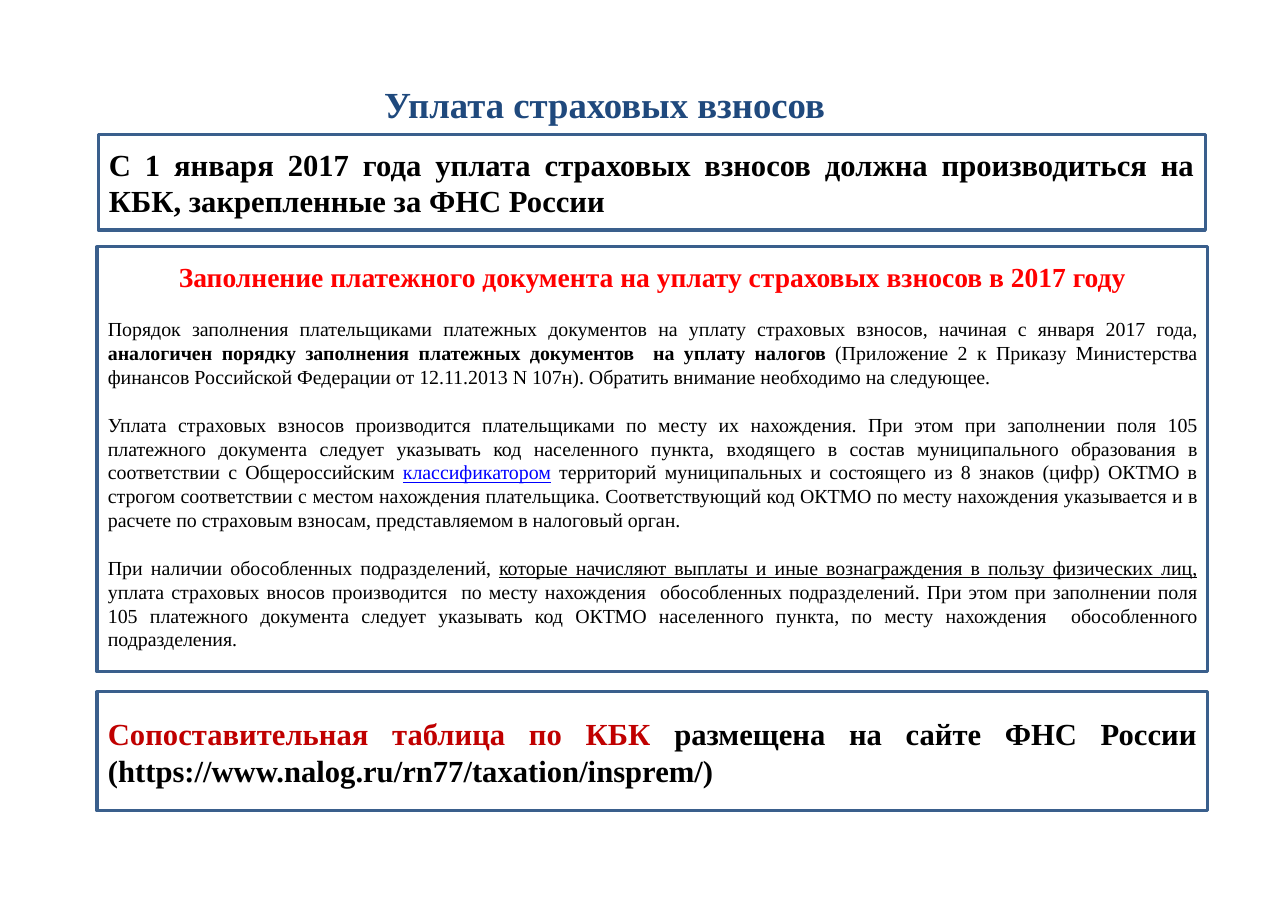
from dataclasses import dataclass

from pptx import Presentation
from pptx.dml.color import RGBColor as Color
from pptx.enum.shapes import MSO_SHAPE as Shape
from pptx.enum.text import MSO_ANCHOR as Anchor, MSO_AUTO_SIZE as AutoSize, PP_ALIGN as Align
from pptx.util import Pt


@dataclass(frozen=True)
class Theme:
    font: str = "Times New Roman"
    title: str = "1F497D"
    border: str = "3A5F8C"
    ink: str = "000000"
    heading: str = "FF0000"
    accent: str = "C00000"
    link: str = "0000FF"
    title_size: float = 24
    lead_size: float = 20
    heading_size: float = 18
    body_size: float = 13
    leading: float = 1.2
    border_width: float = 2


THEME = Theme()

LEAD = [("С 1 января 2017 года уплата страховых взносов должна производиться "
         "на КБК, закрепленные за ФНС России", {})]
HEADING = [("Заполнение платежного документа на уплату страховых взносов в 2017 году",
            {"color": THEME.heading})]
BODY = [
    [("Порядок заполнения плательщиками платежных документов на уплату страховых "
      "взносов, начиная с января 2017 года, ", {}),
     ("аналогичен порядку заполнения платежных документов  на уплату налогов ",
      {"bold": True}),
     ("(Приложение 2 к Приказу Министерства финансов Российской Федерации от "
      "12.11.2013 N 107н). Обратить внимание необходимо на следующее.", {})],
    [("Уплата страховых взносов производится плательщиками по месту их нахождения. "
      "При этом при заполнении поля 105 платежного документа следует указывать код "
      "населенного пункта, входящего в состав муниципального образования в "
      "соответствии с Общероссийским ", {}),
     ("классификатором", {"color": THEME.link, "underline": True}),
     (" территорий муниципальных и состоящего из 8 знаков (цифр) ОКТМО в строгом "
      "соответствии с местом нахождения плательщика. Соответствующий код ОКТМО по "
      "месту нахождения указывается и в расчете по страховым взносам, "
      "представляемом в налоговый орган.", {})],
    [("При наличии обособленных подразделений, ", {}),
     ("которые начисляют выплаты и иные вознаграждения в пользу физических лиц, ",
      {"underline": True}),
     ("уплата страховых вносов производится  по месту нахождения  обособленных "
      "подразделений. При этом при заполнении поля 105 платежного документа следует "
      "указывать код ОКТМО населенного пункта, по месту нахождения  обособленного "
      "подразделения.", {})],
]
SITE = [("Сопоставительная таблица по КБК ", {"color": THEME.accent}),
        ("размещена на сайте ФНС России (https://www.nalog.ru/rn77/taxation/insprem/)", {})]


def apply(target, values):
    for name, value in values.items():
        setattr(target, name, value)


def write_para(para, spans, size, align=Align.JUSTIFY, before=0, bold=False):
    apply(para, {"alignment": align, "space_before": Pt(before), "space_after": Pt(0),
                 "line_spacing": Pt(round(size * THEME.leading, 1))})
    for text, changes in spans:
        span = para.add_run()
        span.text = text
        look = {"bold": bold, "color": THEME.ink, **changes}
        span.font.color.rgb = Color.from_string(look.pop("color"))
        apply(span.font, {"name": THEME.font, "size": Pt(size), **look})


def add_title(page, left, top, width, height):
    title = page.shapes.title
    apply(title, {"left": Pt(left), "top": Pt(top), "width": Pt(width), "height": Pt(height)})
    frame = title.text_frame
    apply(frame, {"auto_size": AutoSize.NONE, "word_wrap": True,
                  "vertical_anchor": Anchor.MIDDLE})
    write_para(frame.paragraphs[0], [("Уплата страховых взносов ", {"color": THEME.title})],
               THEME.title_size, Align.CENTER, bold=True)


def add_panel(page, left, top, width, height, anchor=Anchor.MIDDLE):
    box = page.shapes.add_shape(Shape.RECTANGLE, Pt(left), Pt(top), Pt(width), Pt(height))
    box.shadow.inherit = False
    box.fill.background()
    box.line.color.rgb = Color.from_string(THEME.border)
    box.line.width = Pt(THEME.border_width)
    apply(box.text_frame, {"word_wrap": True, "vertical_anchor": anchor})
    return box.text_frame


def add_statement(page, spans, left, top, width, height):
    frame = add_panel(page, left, top, width, height)
    write_para(frame.paragraphs[0], spans, THEME.lead_size, bold=True)


def add_instructions(page, left, top, width, height):
    frame = add_panel(page, left, top, width, height, Anchor.TOP)
    frame.margin_top = Pt(8.7)
    write_para(frame.paragraphs[0], HEADING, THEME.heading_size, Align.CENTER, bold=True)
    for spans in BODY:
        write_para(frame.add_paragraph(), spans, THEME.body_size,
                   before=THEME.body_size * THEME.leading)


def main():
    deck = Presentation()
    apply(deck, {"slide_width": Pt(841.68), "slide_height": Pt(595.44)})
    page = deck.slides.add_slide(deck.slide_layouts[5])

    # Title
    add_title(page, 137.5, 20.2, 521.3, 95.8)
    # Opening rule
    add_statement(page, LEAD, 64.1, 87.8, 723.6, 62.6)
    # How to fill in the payment document
    add_instructions(page, 63.4, 161.3, 725.8, 277.9)
    # Where to find the table
    add_statement(page, SITE, 63.4, 452.2, 725.8, 77.8)

    deck.save("out.pptx")


if __name__ == "__main__":
    main()
